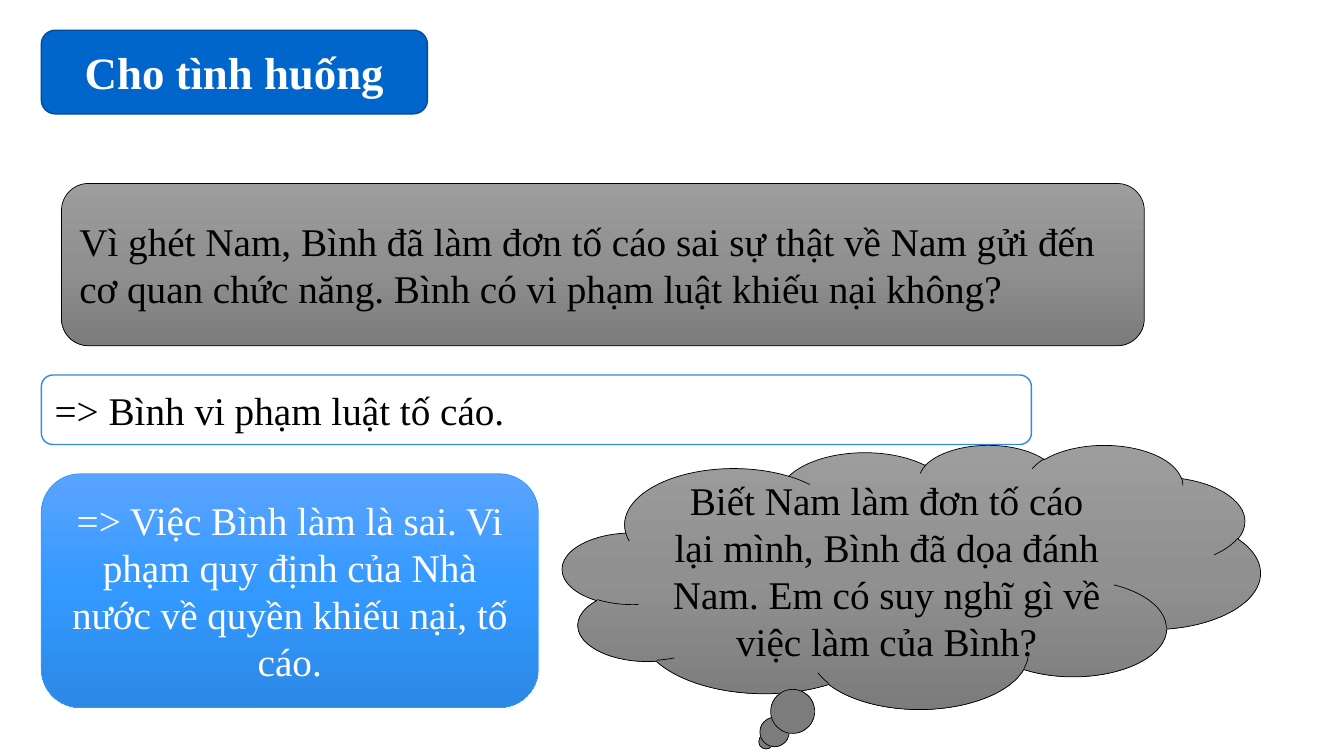
from copy import deepcopy
from dataclasses import dataclass
from typing import Optional, Union

from pptx import Presentation
from pptx.dml.color import RGBColor
from pptx.enum.shapes import MSO_SHAPE
from pptx.enum.text import MSO_ANCHOR, MSO_AUTO_SIZE, PP_ALIGN
from pptx.oxml.ns import qn
from pptx.util import Inches, Pt

Fill = Union[str, tuple[str, str, str]]


@dataclass(frozen=True)
class Theme:
    font: str = "Times New Roman"
    title_size: int = 32
    body_size: int = 28
    black: str = "000000"
    white: str = "FFFFFF"
    banner: str = "0066CC"
    banner_line: str = "004B97"
    answer_line: str = "2D8AE7"
    blue: str = "3399FF"
    gray_gradient: Fill = ("9D9D9D", "909090", "7C7C7C")
    blue_gradient: Fill = ("5AA4FF", "3399FF", "2B88E5")


@dataclass(frozen=True)
class Panel:
    left: float
    top: float
    width: float
    height: float
    fill: Fill
    line: str
    line_width: float = 0.5
    text: str = ""
    color: str = "000000"
    align: PP_ALIGN = PP_ALIGN.CENTER
    preset: MSO_SHAPE = MSO_SHAPE.ROUNDED_RECTANGLE


THEME = Theme()
EDGE = 0.41

BANNER = Panel(EDGE, 0.3, 3.83, 0.83, THEME.banner, THEME.banner_line, 1)
TITLE = "Cho tình huống"

PANELS = [
    # Situation
    Panel(0.61, 1.82, 10.74, 1.61, THEME.gray_gradient, THEME.black,
          text="Vì ghét Nam, Bình đã làm đơn tố cáo sai sự thật về Nam gửi đến "
               "cơ quan chức năng. Bình có vi phạm luật khiếu nại không?",
          align=PP_ALIGN.LEFT),
    # First answer
    Panel(EDGE, 3.72, 9.82, 0.69, THEME.white, THEME.answer_line, 1,
          text="=> Bình vi phạm luật tố cáo.", align=PP_ALIGN.LEFT),
    # Follow-up question
    Panel(5.58, 4.41, 6.92, 2.62, THEME.gray_gradient, THEME.black,
          text="Biết Nam làm đơn tố cáo lại mình, Bình đã dọa đánh Nam. "
               "Em có suy nghĩ gì về việc làm của Bình?",
          preset=MSO_SHAPE.CLOUD_CALLOUT),
    # Second answer
    Panel(EDGE, 4.7, 4.93, 2.32, THEME.blue_gradient, THEME.blue,
          text="=> Việc Bình làm là sai. Vi phạm quy định của Nhà nước "
               "về quyền khiếu nại, tố cáo.",
          color=THEME.white),
]


def write_text(shape, text: str, *, size: int = THEME.body_size,
               color: str = THEME.black, bold: bool = False,
               align: Optional[PP_ALIGN] = PP_ALIGN.CENTER) -> None:
    frame = shape.text_frame
    frame.word_wrap = True
    frame.auto_size = MSO_AUTO_SIZE.NONE
    frame.vertical_anchor = MSO_ANCHOR.MIDDLE
    para = frame.paragraphs[0]
    para.alignment = align
    span = para.add_run()
    span.text = text
    span.font.name = THEME.font
    span.font.size = Pt(size)
    span.font.bold = bold
    span.font.color.rgb = RGBColor.from_string(color)


def paint(shape, fill: Fill) -> None:
    if isinstance(fill, str):
        shape.fill.solid()
        shape.fill.fore_color.rgb = RGBColor.from_string(fill)
        return
    shape.fill.gradient()
    shape.fill.gradient_angle = 270  # counter-clockwise, so top to bottom
    # A new gradient has two stops; add the middle one
    stop_list = shape._element.spPr.find(qn("a:gradFill")).find(qn("a:gsLst"))
    stop_list.insert(1, deepcopy(stop_list[0]))
    for index, (stop, color) in enumerate(zip(shape.fill.gradient_stops, fill)):
        stop.position = index / 2
        stop.color.rgb = RGBColor.from_string(color)


def draw_panel(page, panel: Panel) -> None:
    shape = page.shapes.add_shape(
        panel.preset, Inches(panel.left), Inches(panel.top),
        Inches(panel.width), Inches(panel.height))
    shape.shadow.inherit = False
    paint(shape, panel.fill)
    shape.line.color.rgb = RGBColor.from_string(panel.line)
    shape.line.width = Pt(panel.line_width)
    if panel.text:
        write_text(shape, panel.text, color=panel.color, align=panel.align)


def draw_title(page) -> None:
    draw_panel(page, BANNER)
    title = page.shapes.title
    title.left, title.top = Inches(BANNER.left), Inches(BANNER.top)
    title.width, title.height = Inches(BANNER.width), Inches(BANNER.height)
    write_text(title, TITLE, size=THEME.title_size, color=THEME.white, bold=True)
    # Bring the title in front of its banner
    page.shapes._spTree.append(title._element)


def main() -> None:
    deck = Presentation()
    deck.slide_width, deck.slide_height = Inches(13.33), Inches(7.5)
    page = deck.slides.add_slide(deck.slide_layouts[5])
    draw_title(page)
    for panel in PANELS:
        draw_panel(page, panel)
    deck.save("out.pptx")


if __name__ == "__main__":
    main()
